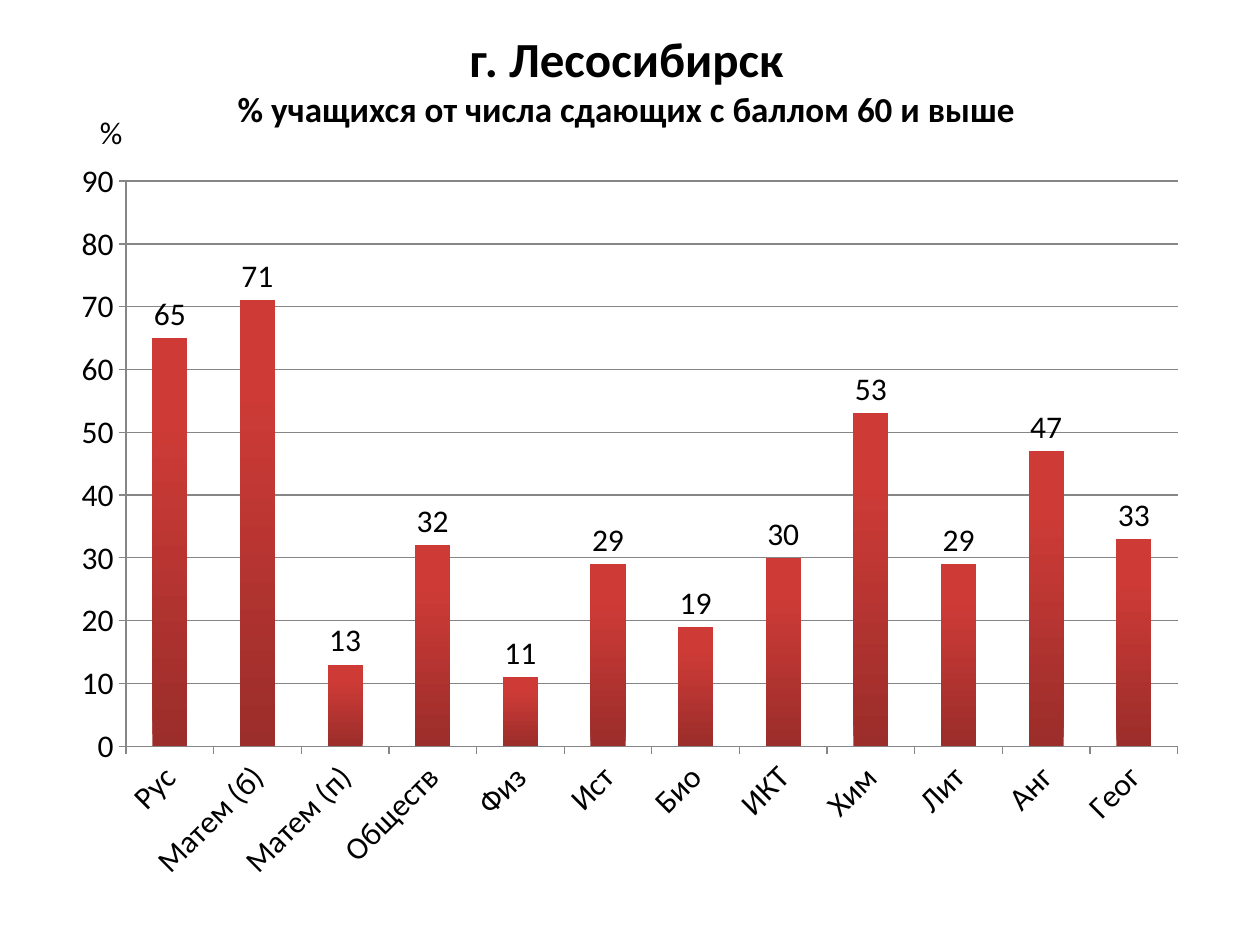
from pptx import Presentation
from pptx.chart.data import CategoryChartData
from pptx.dml.color import RGBColor
from pptx.enum.chart import XL_CHART_TYPE as Kind, XL_LABEL_POSITION as Spot
from pptx.enum.chart import XL_TICK_MARK as Tick
from pptx.enum.text import MSO_ANCHOR as Anchor, PP_ALIGN as Align
from pptx.oxml import parse_xml
from pptx.oxml.ns import nsdecls
from pptx.util import Pt

FONT = "Calibri"
BLACK, GREY = "000000", "868686"
DARK, RED = "9B2D2A", "CE3B37"
MARKS = {
    "Рус": 65, "Матем (б)": 71, "Матем (п)": 13, "Обществ": 32,
    "Физ": 11, "Ист": 29, "Био": 19, "ИКТ": 30,
    "Хим": 53, "Лит": 29, "Анг": 47, "Геог": 33,
}


def color(code):
    return RGBColor.from_string(code)


def style(font, size, bold=False):
    font.name = FONT
    font.size = Pt(size)
    font.bold = bold
    font.color.rgb = color(BLACK)


def add_run(para, text, size, bold=False):
    run = para.add_run()
    run.text = text
    style(run.font, size, bold)


def add_title(slide, box):
    title = slide.shapes.title
    title.left, title.top, title.width, title.height = map(Pt, box)
    frame = title.text_frame
    frame.vertical_anchor = Anchor.MIDDLE
    para = frame.paragraphs[0]
    para.alignment = Align.CENTER
    add_run(para, "г. Лесосибирск", 28, True)
    para.add_line_break()
    add_run(para, "% учащихся от числа сдающих с баллом 60 и выше", 20, True)


def add_unit(slide, box):
    frame = slide.shapes.add_textbox(*map(Pt, box)).text_frame
    frame.word_wrap = True
    add_run(frame.paragraphs[0], "%", 18)


def set_plot(chart, box, inner):
    left, top, width, height = box
    x, y, w, h = inner
    parts = {"x": (x - left) / width, "y": (y - top) / height,
             "w": w / width, "h": h / height}
    tags = "".join(f'<c:{key}Mode val="edge"/>' for key in "xy")
    tags += "".join(f'<c:{key} val="{val:.4f}"/>' for key, val in parts.items())
    area = chart._chartSpace.chart.plotArea
    for old in area.xpath("c:layout"):
        area.remove(old)
    area.insert(0, parse_xml(
        f'<c:layout {nsdecls("c")}><c:manualLayout>'
        f'<c:layoutTarget val="inner"/>{tags}</c:manualLayout></c:layout>'))


def set_axes(chart):
    for axis in (chart.category_axis, chart.value_axis):
        axis.major_tick_mark = Tick.OUTSIDE
        axis.minor_tick_mark = Tick.NONE
        axis.format.line.color.rgb = color(GREY)
        style(axis.tick_labels.font, 18)
    names = chart.category_axis
    names.has_major_gridlines = False
    names._element.txPr.bodyPr.set("rot", "-2700000")
    scale = chart.value_axis
    scale.minimum_scale, scale.maximum_scale = 0, 90
    scale.major_unit = 10
    scale.has_major_gridlines = True
    scale.major_gridlines.format.line.color.rgb = color(GREY)


def set_bars(plot):
    plot.gap_width = 150
    plot.vary_by_categories = False
    bars = plot.series[0]
    bars.invert_if_negative = False
    fill = bars.format.fill
    fill.gradient()
    fill.gradient_angle = 90
    for stop, code, pos in zip(fill.gradient_stops, (DARK, RED), (0, 0.8)):
        stop.color.rgb = color(code)
        stop.position = pos
    tags = bars.data_labels
    tags.show_value = True
    tags.position = Spot.OUTSIDE_END
    style(tags.font, 18)


def add_bars(slide, box, inner):
    data = CategoryChartData()
    data.categories = list(MARKS)
    data.add_series("Series 1", list(MARKS.values()))
    chart = slide.shapes.add_chart(
        Kind.COLUMN_CLUSTERED, *map(Pt, box), data).chart
    chart.has_legend = False
    chart.has_title = False
    style(chart.font, 18)
    set_plot(chart, box, inner)
    set_axes(chart)
    set_bars(chart.plots[0])


def main():
    deck = Presentation()
    deck.slide_width, deck.slide_height = Pt(720), Pt(540)
    slide = deck.slides.add_slide(deck.slide_layouts[5])
    add_bars(slide, (34, 84, 652, 428), (72, 103.5, 601, 323))
    add_unit(slide, (50, 61, 40, 29))
    add_title(slide, (34, 0, 648, 90))
    deck.save("out.pptx")


if __name__ == "__main__":
    main()
